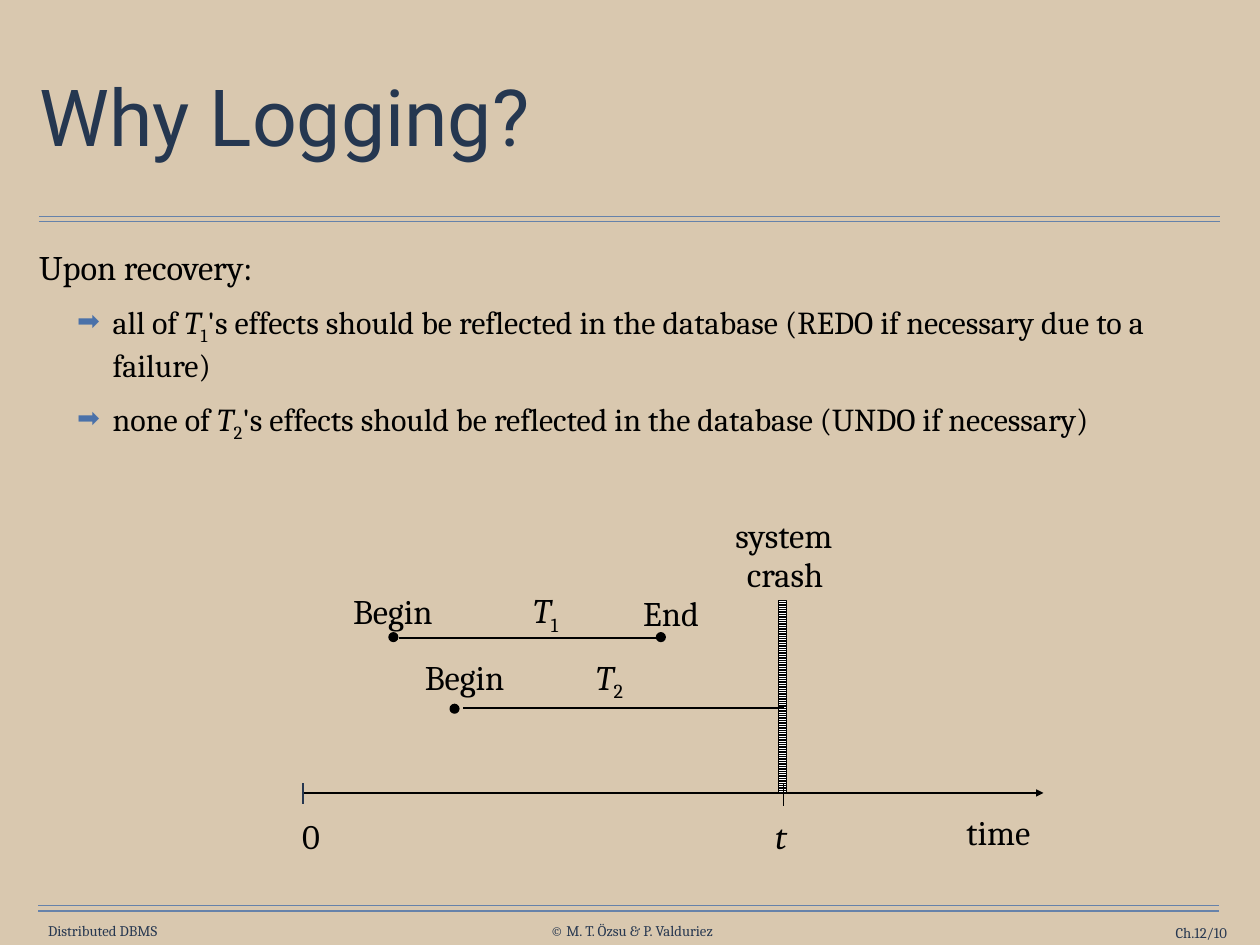
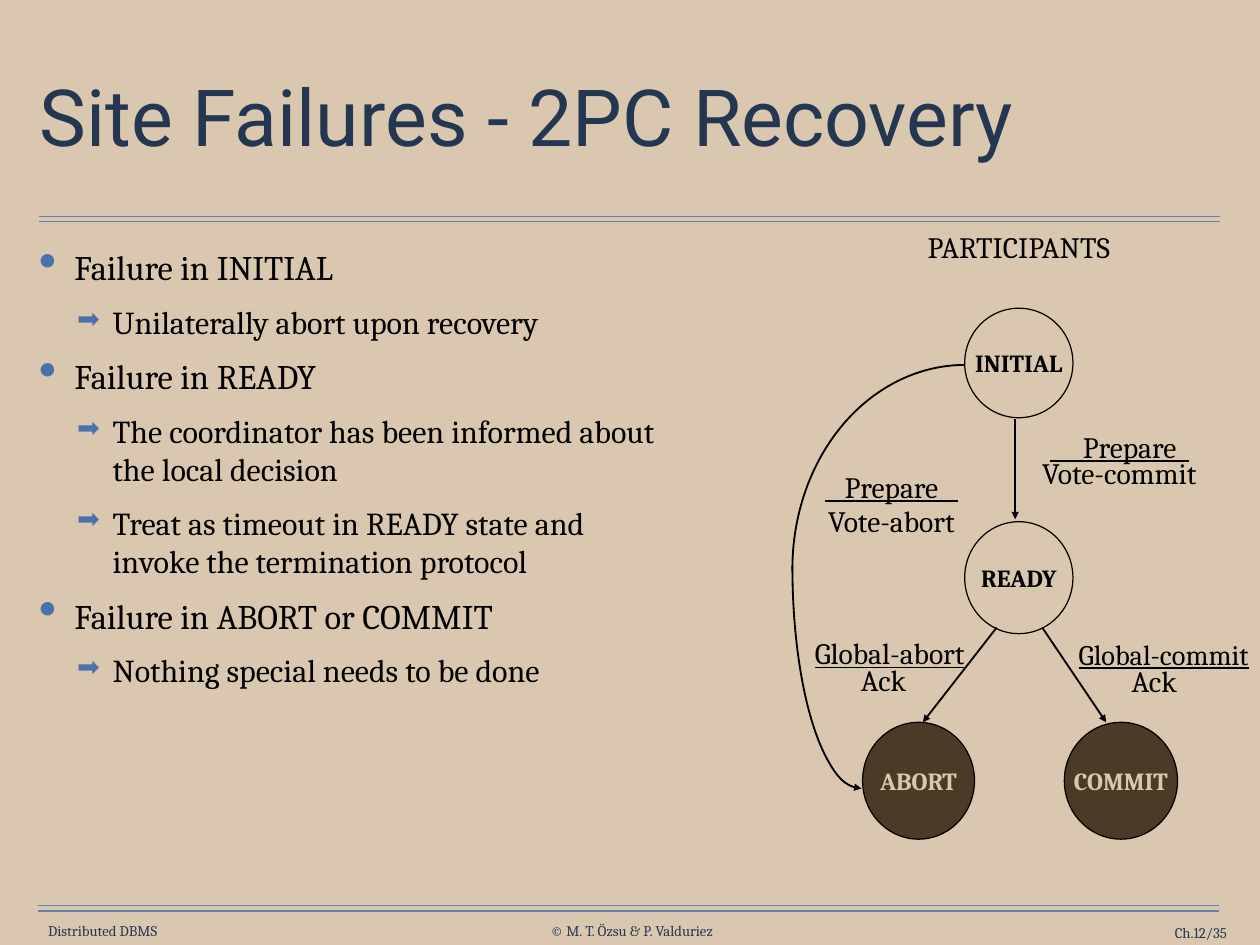
from lxml import etree
from pptx import Presentation
from pptx.dml.color import RGBColor
from pptx.enum.dml import MSO_PATTERN_TYPE
from pptx.enum.shapes import MSO_CONNECTOR, MSO_SHAPE
from pptx.enum.text import MSO_ANCHOR, MSO_AUTO_SIZE, PP_ALIGN
from pptx.oxml.ns import qn
from pptx.util import Pt

SAND = RGBColor(0xD9, 0xC8, 0xAF)
NAVY = RGBColor(0x26, 0x37, 0x50)
TITLE_BLUE = RGBColor(0x25, 0x37, 0x50)
RULE_BLUE = RGBColor(0x66, 0x82, 0xAA)
BULLET_BLUE = RGBColor(0x4A, 0x71, 0xA9)
BROWN = RGBColor(0x4A, 0x3A, 0x26)
BLACK = RGBColor(0, 0, 0)
WHITE = RGBColor(0xFF, 0xFF, 0xFF)

STRAIGHT = MSO_CONNECTOR.STRAIGHT
OVAL, RECTANGLE, ARC = MSO_SHAPE.OVAL, MSO_SHAPE.RECTANGLE, MSO_SHAPE.ARC
NARROW_HORIZONTAL = MSO_PATTERN_TYPE.NARROW_HORIZONTAL
TOP, MIDDLE = MSO_ANCHOR.TOP, MSO_ANCHOR.MIDDLE
LEFT, CENTER, RIGHT = PP_ALIGN.LEFT, PP_ALIGN.CENTER, PP_ALIGN.RIGHT

TITLE_FONT, TEXT_FONT = "Roboto", "Cambria"
TITLE_ONLY = 5
ITALIC, SUBSCRIPT = "italic", "subscript"
# margin, size, bullet, bullet size in percent, by level
LEVELS = [(28.8, 28, "•", 150), (59.8, 26, "➡", 85)]
HANGING = 28.8


def set_font(paragraph, size, color=BLACK, name=TEXT_FONT, bold=None):
    font = paragraph.font
    font.name, font.size, font.bold = name, Pt(size), bold
    font.color.rgb = color


def add_runs(paragraph, parts):
    """Each part is a string or a (string, style) pair."""
    for part in parts:
        text, style = (part, None) if isinstance(part, str) else part
        run = paragraph.add_run()
        run.text = text
        if style == ITALIC:
            run.font.italic = True
        elif style == SUBSCRIPT:
            run._r.get_or_add_rPr().set("baseline", "-25000")


def set_frame(frame, margins, anchor=TOP, wrap=False):
    frame.margin_left = frame.margin_right = Pt(margins[0])
    frame.margin_top = frame.margin_bottom = Pt(margins[1])
    frame.vertical_anchor = anchor
    frame.word_wrap = wrap
    frame.auto_size = MSO_AUTO_SIZE.NONE


def add_text_box(slide, left, top, width, height):
    return slide.shapes.add_textbox(Pt(left), Pt(top), Pt(width), Pt(height))


def add_label(slide, center, top, *parts, size=28, underline=None):
    """One centred line of text, placed by its middle and top."""
    length = sum(len(part if isinstance(part, str) else part[0]) for part in parts)
    width = round(size * 0.55 * length + 20)
    box = add_text_box(slide, center - width / 2, top, width, round(size * 1.2 + 10))
    set_frame(box.text_frame, (10, 5))
    paragraph = box.text_frame.paragraphs[0]
    paragraph.alignment = CENTER
    add_runs(paragraph, parts)
    set_font(paragraph, size)
    paragraph.font.underline = underline


def add_arrowhead(line, end):
    etree.SubElement(line._get_or_add_ln(), qn("a:" + end), type="triangle")


def add_line(slide, start, finish, color=BLACK, width=1.5, arrow=False):
    connector = slide.shapes.add_connector(
        STRAIGHT, Pt(start[0]), Pt(start[1]), Pt(finish[0]), Pt(finish[1]))
    connector.line.color.rgb = color
    connector.line.width = Pt(width)
    if arrow:
        add_arrowhead(connector.line, "tailEnd")
    etree.SubElement(connector._element.spPr, qn("a:effectLst"))


def add_outlined(slide, kind, left, top, width, height, fill=None, line_width=1):
    shape = slide.shapes.add_shape(kind, Pt(left), Pt(top), Pt(width), Pt(height))
    shape.shadow.inherit = False
    shape.line.color.rgb = BLACK
    shape.line.width = Pt(line_width)
    if fill is None:
        shape.fill.background()
    else:
        shape.fill.solid()
        shape.fill.fore_color.rgb = fill
    return shape


def add_page(presentation, title, page_number):
    """A slide with its title, double rules and footers."""
    slide = presentation.slides.add_slide(presentation.slide_layouts[TITLE_ONLY])
    for left, top in ((31.7, 175.8), (31, 736)):
        for rule_top in (top, top + 4.3):
            add_line(slide, (left, rule_top), (left + 960, rule_top), RULE_BLUE, 1)

    footers = [
        ("Distributed DBMS", 33.8, 749.5, 99.4, CENTER),
        ("© M. T. Özsu & P. Valduriez", 438.5, 749.5, 149.8, CENTER),
        (f"Ch.12/{page_number}", 886.3, 751, 110.9, RIGHT),
    ]
    for text, left, top, width, alignment in footers:
        box = add_text_box(slide, left, top, width, 14.4)
        set_frame(box.text_frame, (0, 0), MIDDLE, wrap=alignment == RIGHT)
        paragraph = box.text_frame.paragraphs[0]
        paragraph.text = text
        paragraph.alignment = alignment
        set_font(paragraph, 12, NAVY)

    heading = slide.shapes.title
    heading.left, heading.top, heading.width, heading.height = (
        Pt(28), Pt(35.3), Pt(968), Pt(126.7))
    set_frame(heading.text_frame, (4.3, 4.3), MIDDLE, wrap=True)
    paragraph = heading.text_frame.paragraphs[0]
    paragraph.text = title
    paragraph.alignment = LEFT
    paragraph.line_spacing = 0.9
    set_font(paragraph, 64, TITLE_BLUE, TITLE_FONT)
    return slide


def add_bullet(properties, character, percent):
    color = etree.SubElement(properties, qn("a:buClr"))
    etree.SubElement(color, qn("a:srgbClr"), val=str(BULLET_BLUE))
    etree.SubElement(properties, qn("a:buSzPct"), val=str(percent * 1000))
    etree.SubElement(properties, qn("a:buChar"), char=character)


def add_body(slide, width, height, items):
    """Each item is its level, whether it has a bullet, and its parts."""
    frame = add_text_box(slide, 27.4, 195.8, width, height).text_frame
    set_frame(frame, (4.3, 4.3), wrap=True)
    for index, (level, bulleted, *parts) in enumerate(items):
        paragraph = frame.paragraphs[0] if index == 0 else frame.add_paragraph()
        margin, size, character, percent = LEVELS[level]
        paragraph.level = level
        properties = paragraph._p.get_or_add_pPr()
        properties.set("marL", str(Pt(margin)))
        properties.set("indent", str(-Pt(HANGING)))
        if bulleted:
            add_bullet(properties, character, percent)
        if index:
            paragraph.space_before = Pt(12)
        add_runs(paragraph, parts)
        set_font(paragraph, size)


def add_timeline(slide, left, top):
    def dot(x, y):
        add_outlined(slide, OVAL, left + x - 3.6, top + y - 3.6, 7.2, 7.2, BLACK)

    def line(start, finish, **style):
        add_line(slide, (left + start[0], top + start[1]),
                 (left + finish[0], top + finish[1]), **style)

    axis, crash = 232.4, 390
    bar = add_outlined(slide, RECTANGLE, left + crash - 4, top + 76, 6, 156.4)
    bar.fill.patterned()
    bar.fill.pattern = NARROW_HORIZONTAL
    bar.fill.fore_color.rgb, bar.fill.back_color.rgb = BLACK, WHITE

    line((0, axis), (601, axis), arrow=True)
    line((-0.7, axis - 8), (-0.7, axis + 9.3), color=NAVY, width=1)
    line((crash, axis - 8), (crash, axis + 10.8), width=1)

    line((77, 106.4), (288, 106.4))
    line((129.6, 163.3), (crash, 163.3))
    for x, y in ((72.7, 105.8), (290.1, 105.8), (122.4, 164)):
        dot(x, y)

    labels = [
        (390, 0.6, "system"), (391, 32.2, "crash"),
        (72.3, 62.5, "Begin"), (298.4, 64, "End"), (130.6, 115.8, "Begin"),
        (196.5, 61.8, ("T", ITALIC), ("1", SUBSCRIPT)),
        (248.4, 115.8, ("T", ITALIC), ("2", SUBSCRIPT)),
        (5.7, 245.4, "0"), (387.7, 245.4, ("t", ITALIC)), (564.4, 242.5, "time"),
    ]
    for center, label_top, *parts in labels:
        add_label(slide, left + center, top + label_top, *parts)


def add_state_diagram(slide, left, top):
    add_label(slide, left + 184, top, "PARTICIPANTS", size=24)

    states = [
        ("INITIAL", 140, 69.5, 88, 89, SAND, BLACK),
        ("READY", 140, 243, 88, 91, SAND, BLACK),
        ("ABORT", 57, 406, 91, 95, BROWN, SAND),
        ("COMMIT", 221, 406, 92, 95, BROWN, SAND),
    ]
    for name, x, y, width, height, fill, color in states:
        state = add_outlined(slide, OVAL, left + x, top + y, width, height, fill)
        set_frame(state.text_frame, (0, 0), MIDDLE)
        paragraph = state.text_frame.paragraphs[0]
        paragraph.text = name
        paragraph.alignment = CENTER
        set_font(paragraph, 20, color, bold=True)

    # event, middle, top, size, action, its offsets, width of the bar between
    transitions = [
        ("Prepare", 274, 162.4, 24, "Vote-commit", -8.3, 21.6, 113),
        ("Prepare", 80.5, 195, 24, "Vote-abort", 0, 27.7, 108),
        ("Global-abort", 79, 330, 24, "Ack", -5, 21.6, None),
        ("Global-commit", 301.7, 331.6, 23, "Ack", -7.7, 21.6, None),
    ]
    for event, x, y, size, action, shift, drop, bar in transitions:
        center, label_top = left + x, top + y
        add_label(slide, center, label_top, event, size=size, underline=bar is None)
        add_label(slide, center + shift, label_top + drop, action, size=24)
        if bar:
            middle, bar_top = center + shift, label_top + 31.2
            add_line(slide, (middle - bar / 2, bar_top), (middle + bar / 2, bar_top), width=1)

    # quarter ellipses from INITIAL round to ABORT; angles in degrees
    arcs = [
        (115.6, 280.4, 331.2, 180, 270, False),
        (99.8, 112.3, 360, 90, 180, True),
    ]
    for y, width, height, start, finish, arrow in arcs:
        arc = add_outlined(slide, ARC, left, top + y, width, height, line_width=1.5)
        arc.adjustments[0], arc.adjustments[1] = start * 0.6, finish * 0.6
        if arrow:
            add_arrowhead(arc.line, "headEnd")

    for x1, y1, x2, y2 in ((181, 159.5, 181, 241), (166, 329, 106, 406),
                           (203, 329, 255, 406)):
        add_line(slide, (left + x1, top + y1), (left + x2, top + y2), arrow=True)


def main():
    presentation = Presentation()
    presentation.slide_width, presentation.slide_height = Pt(1024), Pt(768)
    background = presentation.slide_master.background.fill
    background.solid()
    background.fore_color.rgb = SAND

    logging_slide = add_page(presentation, "Why Logging?", 10)
    add_body(logging_slide, 968, 205, [
        (0, False, "Upon recovery:"),
        (1, True, "all of ", ("T", ITALIC), ("1", SUBSCRIPT),
         "'s effects should be reflected in the database "
         "(REDO if necessary due to a failure)"),
        (1, True, "none of ", ("T", ITALIC), ("2", SUBSCRIPT),
         "'s effects should be reflected in the database (UNDO if necessary)"),
    ])
    add_timeline(logging_slide, 247, 412)

    recovery_slide = add_page(presentation, "Site Failures - 2PC Recovery", 35)
    add_body(recovery_slide, 513, 533, [
        (0, True, "Failure in INITIAL"),
        (1, True, "Unilaterally abort upon recovery"),
        (0, True, "Failure in READY"),
        (1, True, "The coordinator has been informed about the local decision"),
        (1, True, "Treat as timeout in READY state and invoke the termination protocol"),
        (0, True, "Failure in ABORT or COMMIT"),
        (1, True, "Nothing special needs to be done"),
    ])
    add_state_diagram(recovery_slide, 644, 181)

    presentation.save("out.pptx")


if __name__ == "__main__":
    main()
